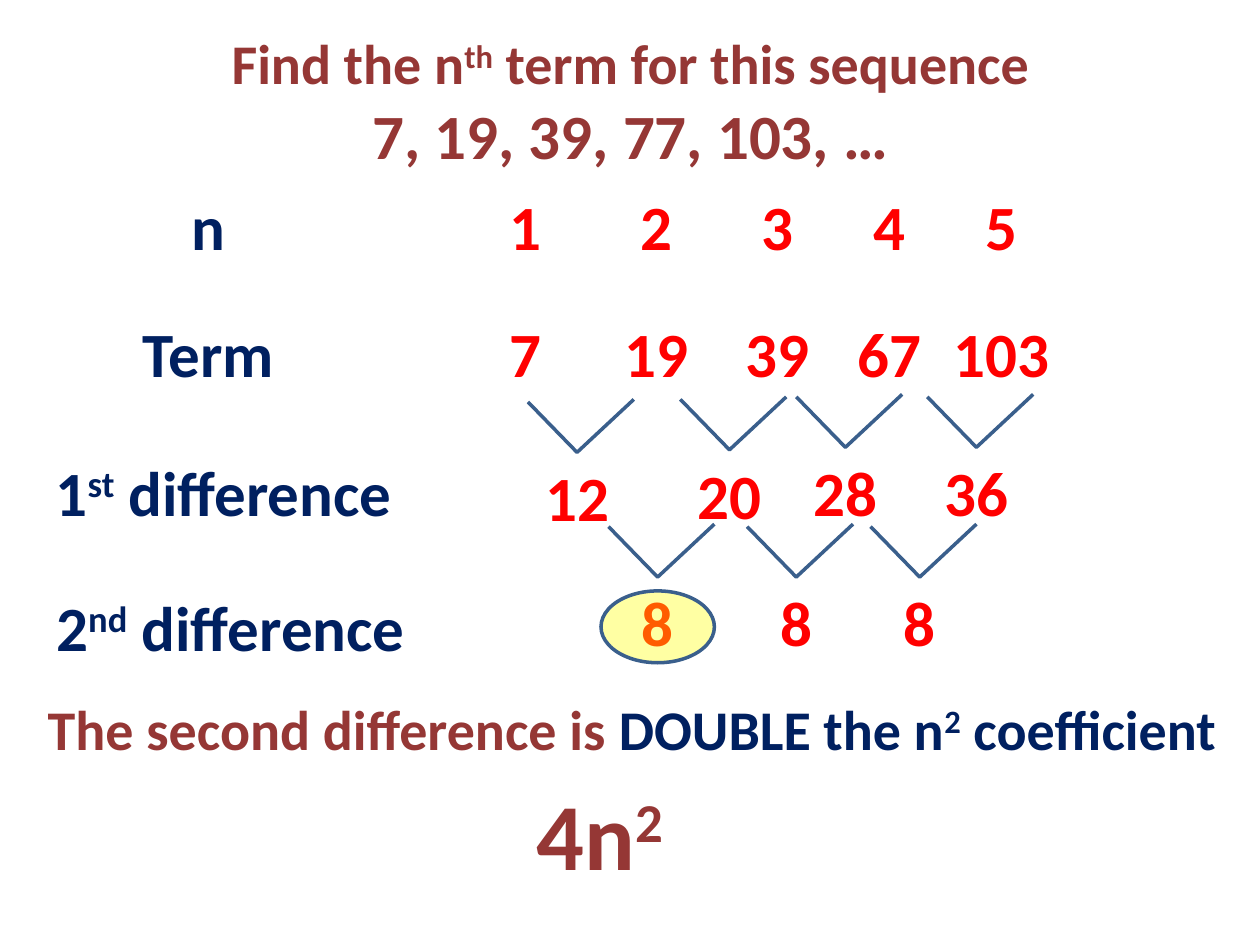
from lxml import etree
from pptx import Presentation
from pptx.dml.color import RGBColor
from pptx.enum.shapes import MSO_SHAPE
from pptx.enum.text import MSO_AUTO_SIZE, PP_ALIGN
from pptx.oxml.ns import qn
from pptx.util import Inches, Pt

CENTER, LEFT = PP_ALIGN.CENTER, PP_ALIGN.LEFT
FIT = MSO_AUTO_SIZE.SHAPE_TO_FIT_TEXT
OVAL = MSO_SHAPE.OVAL
MAROON, NAVY, RED, STEEL, YELLOW = "953735", "002060", "FF0000", "3A5F8C", "FFFF00"
ROW_HEIGHT = 0.71
VEE_HEIGHT = 0.42
VEE_TIP = 0.39  # from the left end of a vee to its tip


def color(value):
    return RGBColor.from_string(value)


def add_span(para, text, size, ink, raised=False):
    span = para.add_run()
    span.text = text
    span.font.name = "Calibri"
    span.font.size = Pt(size)
    span.font.bold = True
    span.font.color.rgb = color(ink)
    if raised:
        span.font._element.set("baseline", "30000")


def add_text(page, left, top, width, height, lines, align=CENTER, wrap=True):
    """Each line is a list of (text, size, color[, raised]) spans."""
    box = page.shapes.add_textbox(Inches(left), Inches(top), Inches(width), Inches(height))
    frame = box.text_frame
    frame.word_wrap = wrap
    frame.auto_size = FIT
    for index, spans in enumerate(lines):
        para = frame.add_paragraph() if index else frame.paragraphs[0]
        para.alignment = align
        for span in spans:
            add_span(para, *span)


def add_number(page, center, top, text):
    width = 0.21 + 0.255 * len(text)
    add_text(page, center - width / 2, top, width, ROW_HEIGHT, [[(text, 36, RED)]], wrap=False)


def outline(shape):
    shape.shadow.inherit = False
    shape.line.color.rgb = color(STEEL)
    shape.line.width = Pt(2)


def add_difference(page, left, top, text):
    """A vee joining two numbers, with their difference below its tip."""
    builder = page.shapes.build_freeform(Inches(left), Inches(top + 0.02))
    builder.add_line_segments(
        [(Inches(left + VEE_TIP), Inches(top + VEE_HEIGHT)), (Inches(left + 0.84), Inches(top))],
        close=False)
    vee = builder.convert_to_shape()
    vee.fill.background()
    outline(vee)
    add_number(page, left + VEE_TIP, top + VEE_HEIGHT, text)


def add_highlight(page, left, top, width, height):
    ring = page.shapes.add_shape(OVAL, Inches(left), Inches(top), Inches(width), Inches(height))
    ring.fill.solid()
    ring.fill.fore_color.rgb = color(YELLOW)
    tint = ring.fill._xPr.find(qn("a:solidFill"))[0]
    etree.SubElement(tint, qn("a:alpha")).set("val", "36000")
    outline(ring)


def add_labels(page):
    labels = [
        (1.42, 1.44, 0.47, [("n",)]),
        (1.03, 2.45, 1.25, [("Term",)]),
        (0.3, 3.55, 2.95, [("1",), ("st", True), (" difference",)]),
        (0.3, 4.62, 3.06, [("2",), ("nd", True), (" difference",)]),
    ]
    for left, top, width, parts in labels:
        spans = [(text, 36, NAVY, *raised) for text, *raised in parts]
        add_text(page, left, top, width, ROW_HEIGHT, [spans], wrap=False)


def add_sequence(page):
    # Positions and terms
    centers = [4.17, 5.21, 6.17, 7.06, 7.95]
    terms = ["7", "19", "39", "67", "103"]
    for position, (center, term) in enumerate(zip(centers, terms), 1):
        add_number(page, center, 1.44, str(position))
        add_number(page, center, 2.45, term)

    # First differences, then second differences
    for left, top, text in [(4.19, 3.17, "12"), (5.4, 3.15, "20"),
                            (6.32, 3.13, "28"), (7.36, 3.13, "36")]:
        add_difference(page, left, top, text)
    for left in (4.83, 5.93, 6.91):
        add_difference(page, left, 4.16, "8")
    add_highlight(page, 4.77, 4.69, 0.9, 0.57)


def main():
    deck = Presentation()
    deck.slide_width, deck.slide_height = Inches(10), Inches(7.5)
    page = deck.slides.add_slide(deck.slide_layouts[6])

    # Question
    add_text(page, 0.28, 0.18, 9.45, 1.25, [
        [("Find the n", 32, MAROON), ("th", 32, MAROON, True),
         (" term for this sequence", 32, MAROON)],
        [("7, 19, 39, 77, 103, …", 36, MAROON)],
    ])

    # Difference table
    add_labels(page)
    add_sequence(page)

    # Rule and result
    add_text(page, 0.28, 5.46, 9.65, 0.64, [
        [("The second difference is ", 32, MAROON), ("DOUBLE the n", 32, NAVY),
         ("2", 32, NAVY, True), (" coefficient", 32, NAVY)],
    ], LEFT)
    add_text(page, 4.16, 6.11, 1.63, 1.01, [[("4n", 54, MAROON), ("2", 54, MAROON, True)]], LEFT)

    deck.save("out.pptx")


if __name__ == "__main__":
    main()
